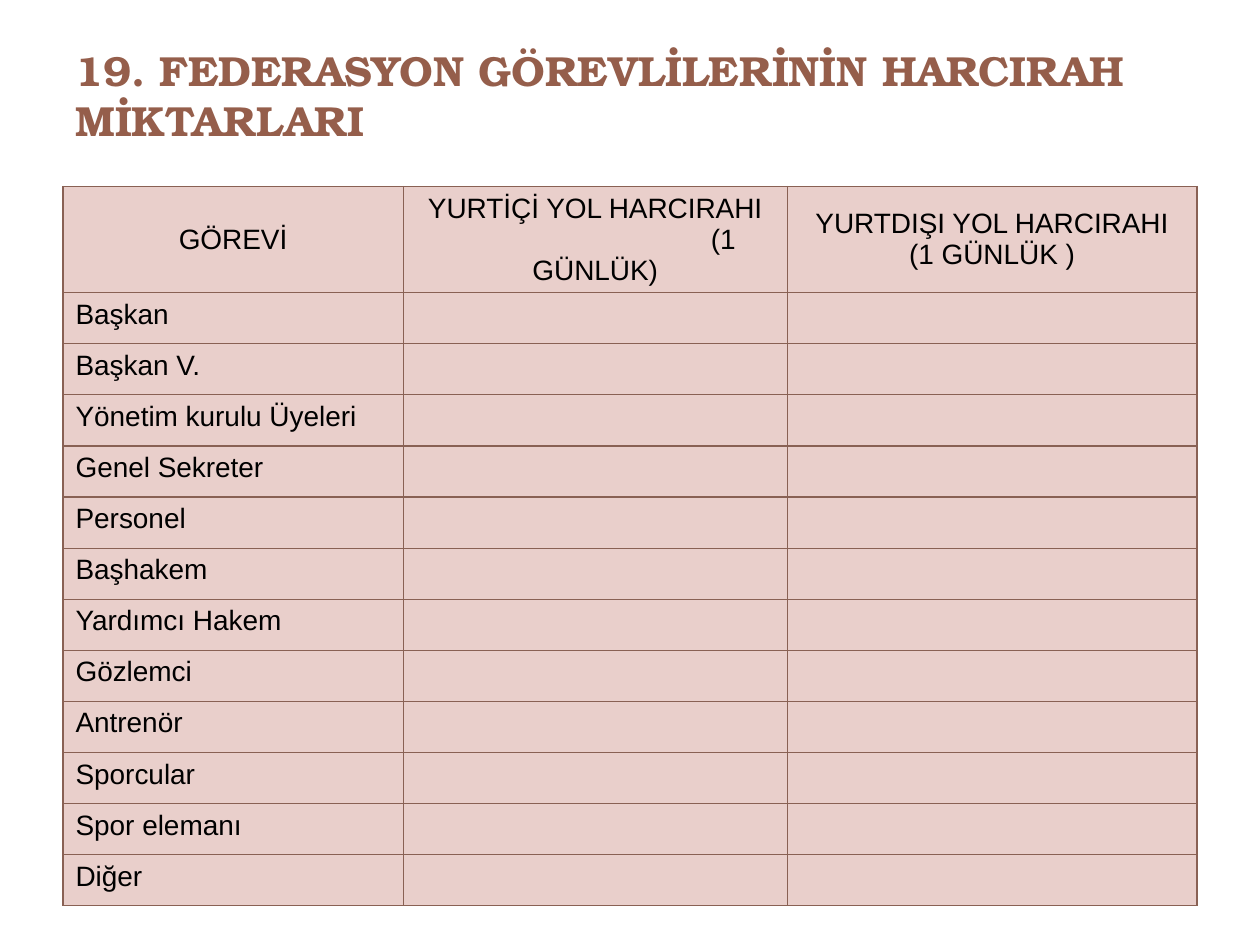
from lxml.etree import SubElement
from pptx import Presentation
from pptx.dml.color import RGBColor
from pptx.enum.text import MSO_ANCHOR, PP_ALIGN
from pptx.oxml.ns import qn
from pptx.util import Cm, Pt


def color(value):
    return RGBColor.from_string(value)


def add_borders(cell, value, width):
    properties = cell._tc.get_or_add_tcPr()
    for index, side in enumerate(("a:lnL", "a:lnR", "a:lnT", "a:lnB")):
        line = SubElement(properties, qn(side), w=str(width))
        SubElement(SubElement(line, qn("a:solidFill")), qn("a:srgbClr"), val=value)
        properties.insert(index, line)


presentation = Presentation()
presentation.slide_width, presentation.slide_height = Cm(25.4), Cm(19.05)
slide = presentation.slides.add_slide(presentation.slide_layouts[5])

# Title
title = slide.shapes.title
title.left, title.top, title.width, title.height = Cm(1.27), Cm(0.76), Cm(22.86), Cm(3.18)
title.text_frame.vertical_anchor = MSO_ANCHOR.TOP
heading = title.text_frame.paragraphs[0]
heading.alignment = PP_ALIGN.LEFT
heading_run = heading.add_run()
heading_run.text = "19. FEDERASYON GÖREVLİLERİNİN HARCIRAH MİKTARLARI"
heading_run.font.name = "TeX Gyre Bonum"
heading_run.font.size = Pt(24)
heading_run.font.bold = True
heading_run.font.color.rgb = color("955E4B")

# Table content: each cell is a list of lines
headers = [
    ["GÖREVİ"],
    ["YURTİÇİ YOL HARCIRAHI", "(1", "GÜNLÜK)"],
    ["YURTDIŞI YOL HARCIRAHI", "(1 GÜNLÜK )"],
]
duties = [
    "Başkan", "Başkan V.", "Yönetim kurulu Üyeleri", "Genel Sekreter",
    "Personel", "Başhakem", "Yardımcı Hakem", "Gözlemci",
    "Antrenör", "Sporcular", "Spor elemanı", "Diğer",
]
rows = [headers] + [[[duty], [], []] for duty in duties]

# Table grid
column_widths = [Cm(6.86), Cm(7.74), Cm(8.26)]
header_height, duty_height = Cm(2.14), Cm(1.01)
allowances = slide.shapes.add_table(
    len(rows), len(column_widths), Cm(1.27), Cm(3.76),
    sum(column_widths), header_height + duty_height * len(duties),
).table
for column, width in zip(allowances.columns, column_widths):
    column.width = width

# Table cells
for row_index, row in enumerate(rows):
    is_header = row_index == 0
    allowances.rows[row_index].height = header_height if is_header else duty_height
    for column_index, lines in enumerate(row):
        cell = allowances.cell(row_index, column_index)
        cell.fill.solid()
        cell.fill.fore_color.rgb = color("E9CFCB")
        add_borders(cell, "896154", Pt(0.75))
        cell.vertical_anchor = MSO_ANCHOR.MIDDLE if is_header else MSO_ANCHOR.TOP
        for line_index, line in enumerate(lines):
            frame = cell.text_frame
            paragraph = frame.add_paragraph() if line_index else frame.paragraphs[0]
            paragraph.alignment = PP_ALIGN.CENTER if is_header else PP_ALIGN.LEFT
            if line == "(1":
                # Indent pushes the short middle line to the right
                paragraph._p.get_or_add_pPr().set("marL", str(Cm(5.16)))
            run = paragraph.add_run()
            run.text = line
            run.font.name = "Arial"
            run.font.size = Pt(16)
            run.font.bold = False
            run.font.color.rgb = color("000000")

presentation.save("out.pptx")
